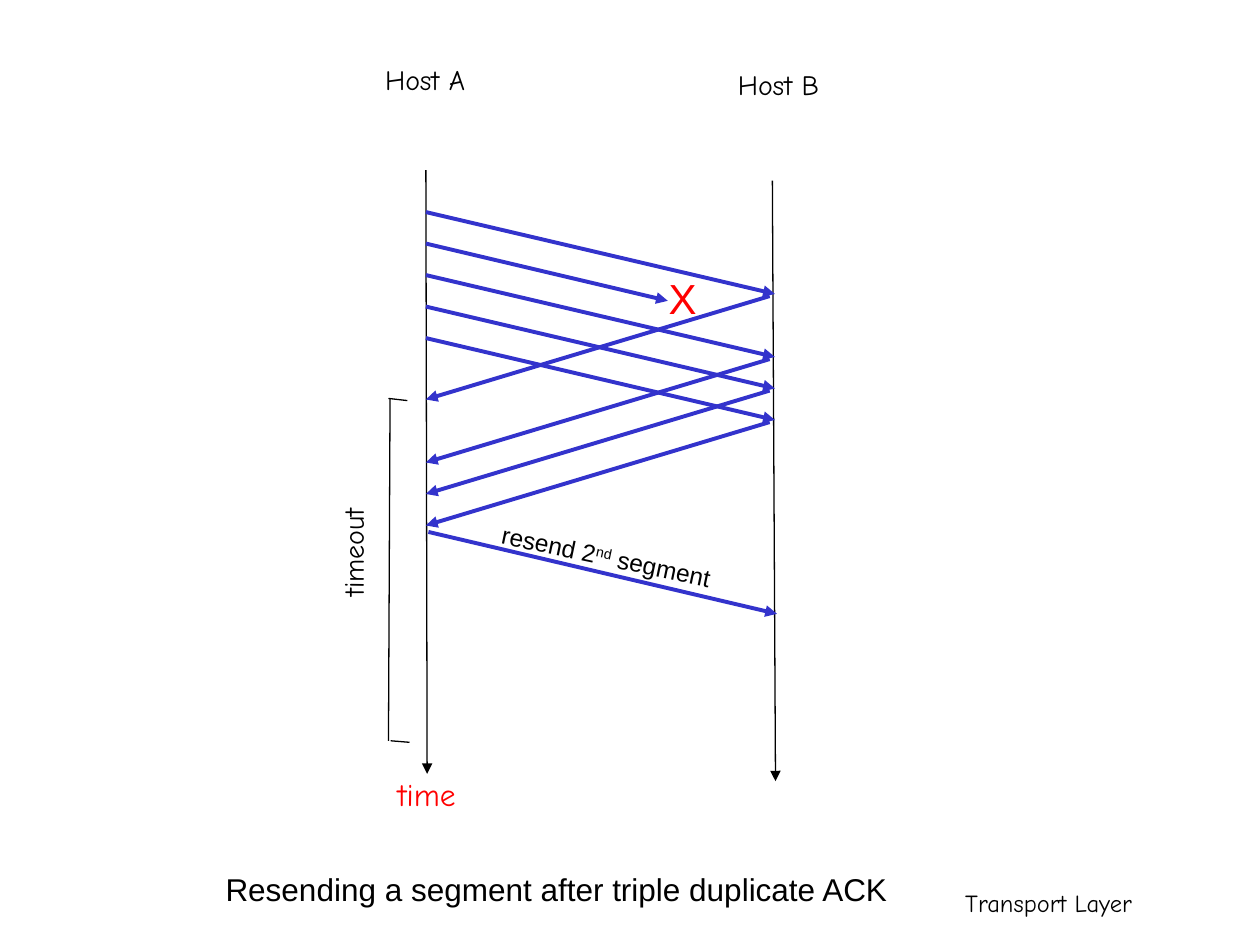
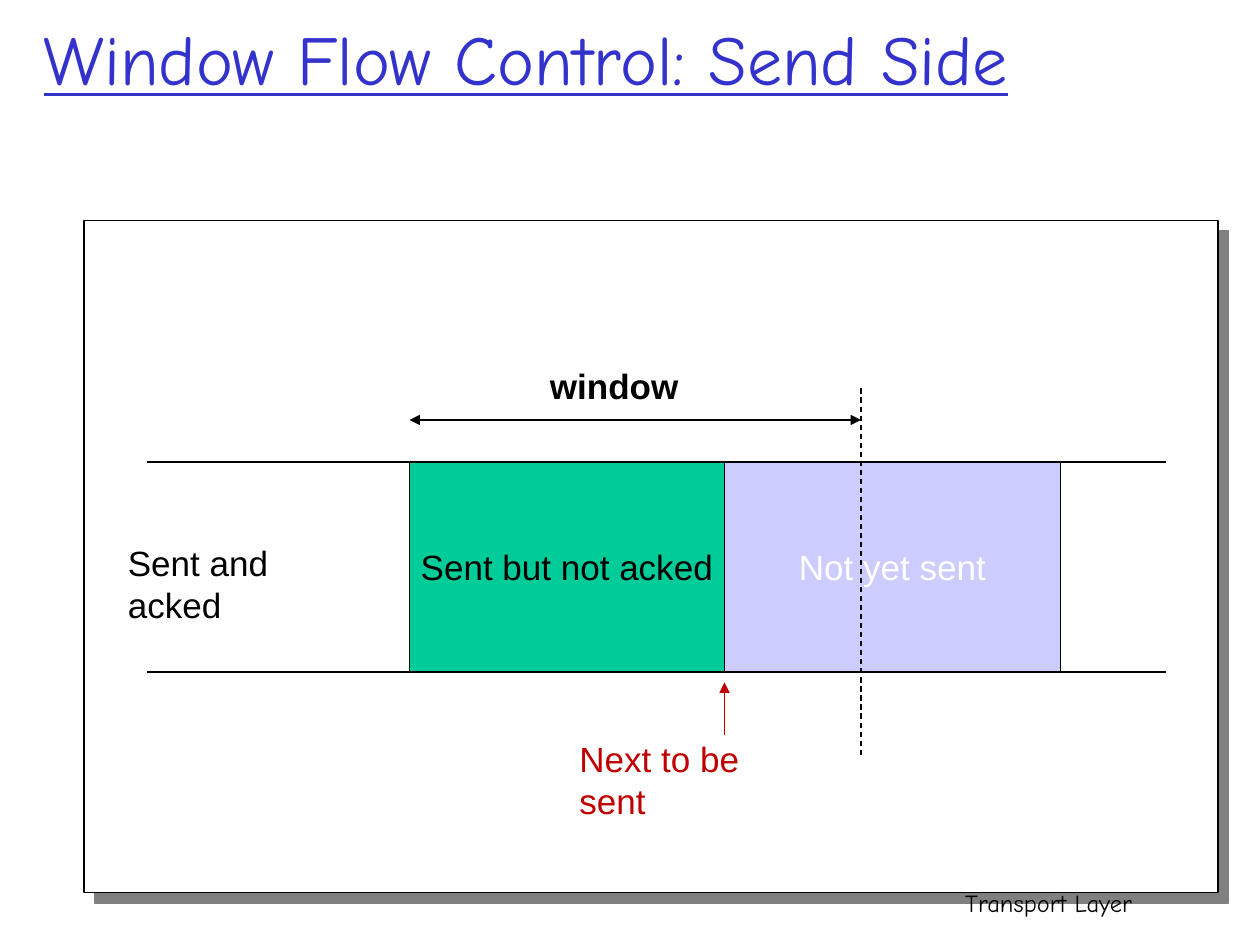
from dataclasses import dataclass
from typing import Optional

from lxml import etree
from pptx import Presentation
from pptx import util as u
from pptx.dml.color import RGBColor
from pptx.enum import dml, shapes, text
from pptx.oxml import ns

COLUMNS, ROWS = 120, 90
CELL = u.Inches(10) / COLUMNS
SUPERSCRIPT_MARK = "^"
COLORS = {
    "black": "000000",
    "white": "FFFFFF",
    "blue": "3333CC",
    "red": "FF0000",
    "dark_red": "C00000",
    "green": "00CC99",
    "lavender": "CCCCFF",
    "shadow": "808080",
}
HAND, SANS = "Comic Neue", "Arial"


@dataclass
class Label:
    words: str
    column: float
    row: float
    columns: float
    rows: float
    size: int
    font: str = SANS
    color: str = "black"
    wrap: bool = False
    rotation: float = 0
    bold: bool = False
    underline: bool = False
    align: text.PP_ALIGN = text.PP_ALIGN.LEFT
    anchor: text.MSO_ANCHOR = text.MSO_ANCHOR.TOP


@dataclass
class Line:
    start: tuple[float, float]
    end: tuple[float, float]
    color: str = "black"
    width: float = 0.75
    head: bool = False
    tail: bool = False
    dashed: bool = False


@dataclass
class Box:
    column: float
    row: float
    columns: float
    rows: float
    fill: str
    label: Optional[str] = None
    label_color: str = "black"


FOOTER = Label("Transport Layer", 60, 84, 49, 6, 14, HAND, wrap=True,
               align=text.PP_ALIGN.RIGHT)


def cells(*counts: float) -> list[u.Emu]:
    return [u.Emu(round(count * CELL)) for count in counts]


def rgb(name: str) -> RGBColor:
    return RGBColor.from_string(COLORS[name])


def set_font(font, label: Label) -> None:
    font.name = label.font
    font.size = u.Pt(label.size)
    font.color.rgb = rgb(label.color)
    font.bold = label.bold
    font.underline = label.underline


def write(frame, label: Label) -> None:
    frame.word_wrap = label.wrap
    frame.vertical_anchor = label.anchor
    paragraph = frame.paragraphs[0]
    paragraph.alignment = label.align
    set_font(paragraph.font, label)
    for index, words in enumerate(label.words.split(SUPERSCRIPT_MARK)):
        run = paragraph.add_run()
        run.text = words
        if index % 2:
            run.font._element.set("baseline", "30000")


def draw_label(slide, label: Label) -> None:
    shape = slide.shapes.add_textbox(
        *cells(label.column, label.row, label.columns, label.rows))
    shape.rotation = label.rotation
    write(shape.text_frame, label)


def draw_line(slide, line: Line) -> None:
    connector = slide.shapes.add_connector(
        shapes.MSO_CONNECTOR.STRAIGHT, *cells(*line.start, *line.end))
    connector.line.color.rgb = rgb(line.color)
    connector.line.width = u.Pt(line.width)
    if line.dashed:
        connector.line.dash_style = dml.MSO_LINE.DASH
    outline = connector.line._get_or_add_ln()
    for tag, wanted in (("a:headEnd", line.head), ("a:tailEnd", line.tail)):
        if wanted:
            etree.SubElement(outline, ns.qn(tag), type="triangle")
    etree.SubElement(outline.getparent(), ns.qn("a:effectLst"))


def draw_box(slide, box: Box):
    shape = slide.shapes.add_shape(
        shapes.MSO_SHAPE.RECTANGLE,
        *cells(box.column, box.row, box.columns, box.rows))
    shape.shadow.inherit = False
    shape.fill.solid()
    shape.fill.fore_color.rgb = rgb(box.fill)
    shape.line.color.rgb = rgb("black")
    shape.line.width = u.Pt(0.75)
    if box.label:
        write(shape.text_frame, Label(
            box.label, box.column, box.row, box.columns, box.rows, 20,
            color=box.label_color, align=text.PP_ALIGN.CENTER,
            anchor=text.MSO_ANCHOR.MIDDLE))
    return shape


def cast_shadow(shape) -> None:
    effects = shape._element.spPr.find(ns.qn("a:effectLst"))
    shadow = etree.SubElement(
        effects, ns.qn("a:outerShdw"), blurRad="0", dist=str(u.Pt(8.5)),
        dir="2700000", algn="ctr", rotWithShape="0")
    etree.SubElement(shadow, ns.qn("a:srgbClr"), val=COLORS["shadow"])


def message(start: tuple[float, float], end: tuple[float, float]) -> Line:
    return Line(start, end, "blue", 2.25, tail=True)


def build_retransmission(slide) -> None:
    host_a, host_b = 40.56, 73.8
    first_segment, first_ack, gap = 20.2, 28.2, 3
    fall, ack_fall, resend = 7.8, 9.85, 50.66
    lines = [
        Line((host_a, 16.2), (host_a + 0.12, 73.7), tail=True),
        Line((host_b - 0.24, 17.2), (host_b + 0.06, 74.4), tail=True),
        Line((37.15, 37.95), (37, 70.55)),
        Line((37, 37.95), (38.8, 38.15)),
        Line((37.2, 70.55), (39, 70.7)),
        message((host_a, first_segment + gap), (63.6, 28.65)),
        message((host_a + 0.24, resend), (host_b + 0.2, resend + fall)),
    ]
    for arrived in (0, 2, 3, 4):
        sent = first_segment + arrived * gap
        acked = first_ack + arrived * gap
        lines.append(message((host_a, sent), (host_b, sent + fall)))
        lines.append(message((host_b - 0.5, acked), (host_a, acked + ack_fall)))
    for line in lines:
        draw_line(slide, line)
    for label in (
        Label("Host A", 35.5, 5.4, 11.2, 4.4, 16, HAND),
        Label("Host B", 69.1, 5.85, 10.9, 4.4, 16, HAND),
        Label("timeout", 27.6, 49.8, 12, 4.4, 16, HAND, rotation=270),
        Label("time", 36.7, 73.2, 8.6, 4.8, 18, HAND, "red"),
        Label("X", 62.5, 25.4, 3.7, 6, 24, color="red", wrap=True),
        Label("resend 2^nd^ segment", 46.4, 51.4, 26.6, 4, 14, wrap=True,
              rotation=11.9),
        Label("Resending a segment after triple duplicate ACK",
              20.3, 82.3, 66, 4.8, 18),
    ):
        draw_label(slide, label)


def build_send_window(slide) -> None:
    window_start, next_byte, window_end = 39, 69, 82
    top, bottom = 44, 64
    cast_shadow(draw_box(slide, Box(8, 21, 108, 64, "white")))
    draw_label(slide, Label(
        "Window Flow Control: Send Side", 3, -2, 119, 15, 40, HAND, "blue",
        wrap=True, underline=True, anchor=text.MSO_ANCHOR.MIDDLE))
    for row in (top, bottom):
        draw_line(slide, Line((14, row), (111, row)))
    for box in (
        Box(window_start, top, next_byte - window_start, bottom - top,
            "green", "Sent but not acked"),
        Box(next_byte, top, 32, bottom - top,
            "lavender", "Not yet sent", "white"),
    ):
        draw_box(slide, box)
    for line in (
        Line((window_end, 37), (window_end, 72), dashed=True),
        Line((window_start, 40), (window_end, 40), head=True, tail=True),
        Line((next_byte, 70), (next_byte, 65), "dark_red", tail=True),
    ):
        draw_line(slide, line)
    for label in (
        Label("window", 51.2, 34.15, 14.8, 5.3, 20, bold=True),
        Label("Next to be sent", 54, 69.6, 22, 5.2, 20, color="dark_red",
              wrap=True),
        Label("Sent and acked", 11, 51, 22, 5.2, 20, wrap=True),
    ):
        draw_label(slide, label)


def main() -> None:
    presentation = Presentation()
    presentation.slide_width, presentation.slide_height = cells(COLUMNS, ROWS)
    for build in (build_retransmission, build_send_window):
        slide = presentation.slides.add_slide(presentation.slide_layouts[6])
        build(slide)
        draw_label(slide, FOOTER)
    presentation.save("out.pptx")


if __name__ == "__main__":
    main()
